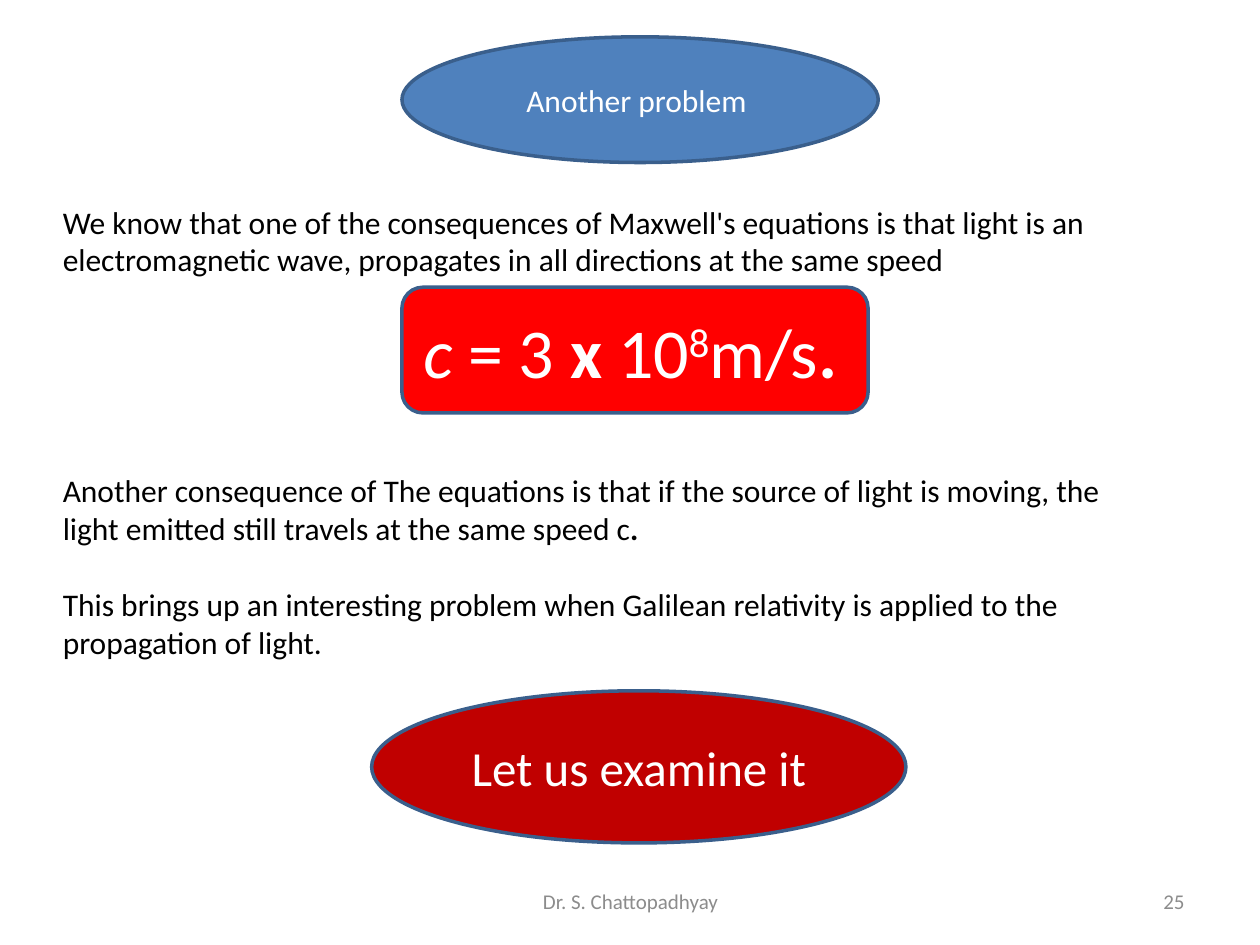
from pptx import Presentation, util as u
from pptx.dml.color import RGBColor
from pptx.enum import shapes, text

WIDTH, HEIGHT = 10, 7.5
FONT = "Calibri"
WHITE, BLACK, GREY, OUTLINE = "FFFFFF", "000000", "8C8C8C", "3A5F8C"
LINE = 22

OVAL = shapes.MSO_SHAPE.OVAL
ROUNDED = shapes.MSO_SHAPE.ROUNDED_RECTANGLE
LEFT, CENTER, RIGHT = text.PP_ALIGN.LEFT, text.PP_ALIGN.CENTER, text.PP_ALIGN.RIGHT
TOP, MIDDLE = text.MSO_ANCHOR.TOP, text.MSO_ANCHOR.MIDDLE

argument = [
    (0, [("We know that one of the consequences of Maxwell's equations is that light is an", "")]),
    (0, [("electromagnetic wave, propagates in all directions at the same speed", "")]),
    (5, [("Another consequence of The equations is that if the source of light is moving, the", "")]),
    (0, [("light emitted still travels at the same speed c", ""), (".", "bi")]),
    (1, [("This brings up an interesting problem when Galilean relativity is applied to the", "")]),
    (0, [("propagation of light.", "")]),
]
light_speed = [("c ", "i"), ("= 3 ", ""), ("x ", "b"), ("10", ""),
               ("8", "^"), ("m/s", ""), (".", "b")]

callouts = [
    (OVAL, (0.319, 0.039, 0.378, 0.133), "4F81BD", 18, [("Another problem ", "")]),
    (ROUNDED, (0.319, 0.304, 0.37, 0.133), "FF0000", 40, light_speed),
    (OVAL, (0.295, 0.731, 0.424, 0.161), "C00000", 28, [("Let us examine it", "")]),
]
texts = [
    ((0.342, 0.927, 0.317, 0.053), 12, GREY, CENTER, MIDDLE, [(0, [("Dr. S. Chattopadhyay", "")])]),
    ((0.717, 0.927, 0.233, 0.053), 12, GREY, RIGHT, MIDDLE, [(0, [("25", "")])]),
    ((0.04, 0.208, 0.913, 0.499), 18, BLACK, LEFT, TOP, argument),
]


def rgb(value):
    return RGBColor.from_string(value)


def place(shares):
    return [u.Inches(share * side) for share, side in zip(shares, (WIDTH, HEIGHT) * 2)]


def write(holder, lines, size, color, align, anchor):
    frame = holder.text_frame
    frame.word_wrap = True
    frame.vertical_anchor = anchor
    for index, (skipped, runs) in enumerate(lines):
        paragraph = frame.add_paragraph() if index else frame.paragraphs[0]
        paragraph.alignment = align
        if skipped:
            paragraph.space_before = u.Pt(skipped * LINE)
        for words, style in runs:
            run = paragraph.add_run()
            run.text = words
            font = run.font
            font.name, font.size = FONT, u.Pt(size)
            font.color.rgb = rgb(color)
            font.bold, font.italic = "b" in style, "i" in style
            if "^" in style:
                font._element.set("baseline", "30000")


deck = Presentation()
deck.slide_width, deck.slide_height = u.Inches(WIDTH), u.Inches(HEIGHT)
slide = deck.slides.add_slide(deck.slide_layouts[6])

for shares, size, color, align, anchor, lines in texts:
    write(slide.shapes.add_textbox(*place(shares)), lines, size, color, align, anchor)

for outline, shares, fill, size, runs in callouts:
    callout = slide.shapes.add_shape(outline, *place(shares))
    callout.shadow.inherit = False
    callout.fill.solid()
    callout.fill.fore_color.rgb = rgb(fill)
    callout.line.color.rgb = rgb(OUTLINE)
    callout.line.width = u.Pt(2)
    write(callout, [(0, runs)], size, WHITE, CENTER, MIDDLE)
    if runs is light_speed:
        space = callout.text_frame.paragraphs[0].add_run()
        space.text = " "
        space.font.size = u.Pt(24)

deck.save("out.pptx")
